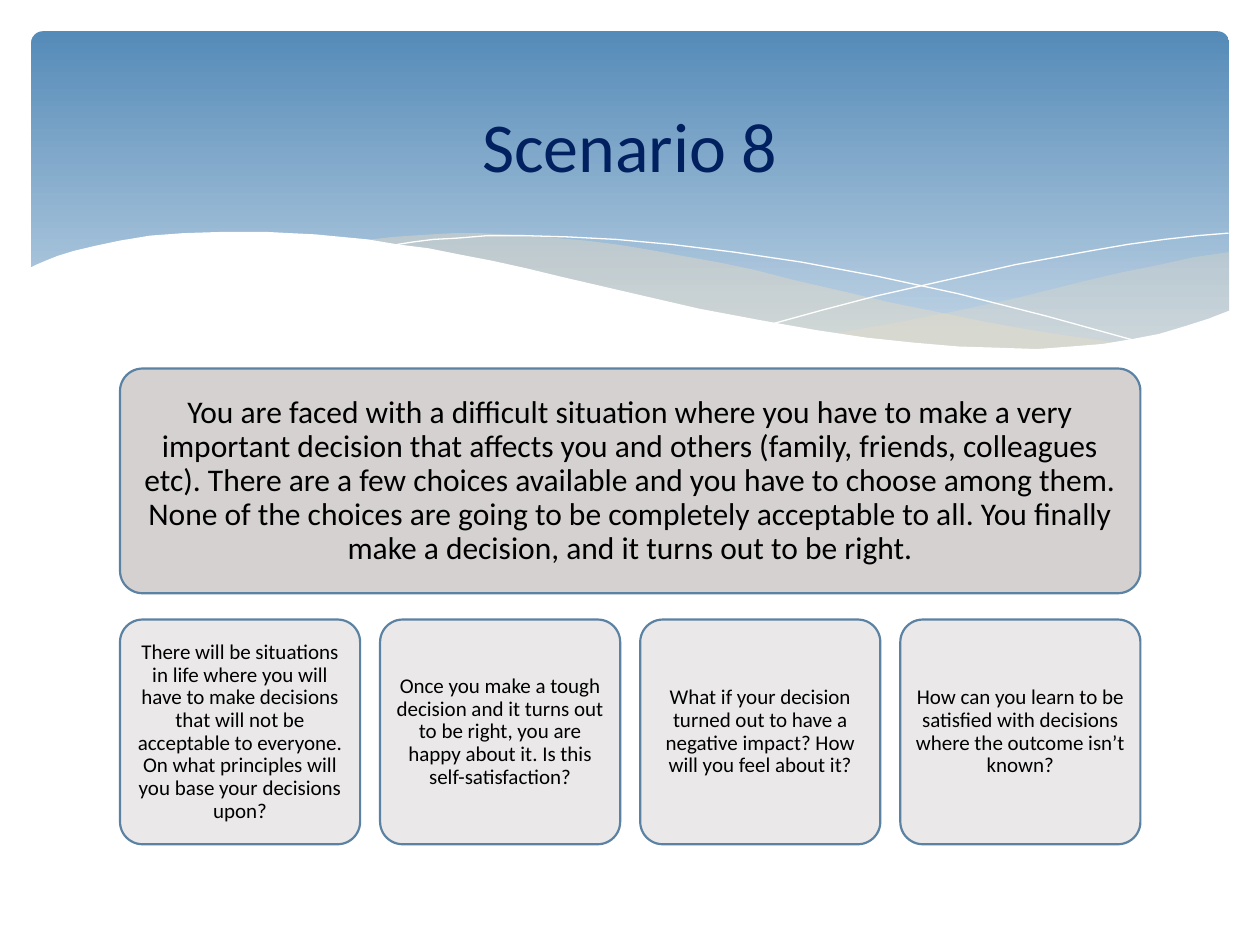
from dataclasses import dataclass

from lxml.etree import SubElement
from pptx import Presentation
from pptx.dml.color import RGBColor
from pptx.enum.shapes import MSO_SHAPE
from pptx.enum.text import MSO_ANCHOR, PP_ALIGN
from pptx.oxml.ns import qn
from pptx.slide import Slide
from pptx.util import Cm, Pt

COLORS = {
    "banner_top": "558BB8", "banner_bottom": "BFD3E4", "wave": "EBDDC3",
    "white": "FFFFFF", "situation": "D5D1D1", "question": "EAE8E8",
    "outline": "5B82A2", "title": "002060", "text": "000000",
}

# Outline points are in units of WAVE_UNIT.
WAVE_UNIT = Cm(0.0254)
RIGHT_WAVE = [
    (976, 200), (948, 204), (921, 210), (891, 216), (861, 223), (805, 237),
    (753, 248), (706, 257), (661, 265), (691, 269), (719, 272), (745, 275),
    (769, 277), (803, 278), (835, 277), (863, 275), (889, 272), (913, 267),
    (935, 262), (949, 257), (963, 252), (976, 247),
]
LEFT_WAVE = [
    (893, 273), (866, 269), (837, 265), (807, 260), (775, 254), (741, 247),
    (706, 240), (668, 231), (629, 222), (598, 214), (569, 208), (541, 203),
    (514, 198), (489, 194), (465, 191), (442, 189), (420, 187), (399, 186),
    (380, 185), (361, 185), (344, 186), (328, 187), (313, 188), (286, 191),
    (323, 196), (362, 203), (404, 211), (449, 222), (491, 232), (530, 240),
    (566, 248), (601, 255), (634, 261), (665, 266), (695, 270), (722, 274),
    (748, 276), (773, 277), (796, 278), (828, 278), (857, 277), (876, 275),
    (893, 273),
]
FALLING_LINE = [
    (309, 195), (328, 192), (344, 190), (363, 189), (387, 187), (416, 187),
    (450, 188), (489, 190), (533, 194), (582, 200), (636, 208), (695, 219),
    (760, 233), (831, 251), (907, 272),
]
RISING_LINE = [
    (613, 257), (653, 246), (695, 235), (748, 223), (806, 210), (866, 199),
    (895, 194), (924, 190), (951, 187), (975, 185),
]
LOWER_EDGE = [
    (977, 246), (959, 253), (940, 259), (920, 265), (899, 269), (875, 273),
    (850, 275), (823, 277), (793, 276), (761, 275), (726, 272), (688, 268),
    (648, 262), (603, 254), (555, 245), (503, 233), (447, 220), (418, 213),
    (391, 207), (365, 202), (340, 197), (316, 194), (292, 190), (271, 188),
    (250, 186), (230, 185), (211, 184), (177, 184), (146, 185), (119, 187),
    (95, 191), (76, 195), (59, 199), (46, 203), (36, 207), (29, 210),
    (23, 213), (23, 329), (977, 329),
]

SITUATION = (
    "You are faced with a difficult situation where you have to make a very "
    "important decision that affects you and others (family, friends, "
    "colleagues etc). There are a few choices available and you have to choose "
    "among them. None of the choices are going to be completely acceptable to "
    "all. You finally make a decision, and it turns out to be right."
)
QUESTIONS = [
    "There will be situations in life where you will have to make decisions "
    "that will not be acceptable to everyone. On what principles will you base "
    "your decisions upon?",
    "Once you make a tough decision and it turns out to be right, you are "
    "happy about it. Is this self-satisfaction?",
    "What if your decision turned out to have a negative impact? How will you "
    "feel about it?",
    "How can you learn to be satisfied with decisions where the outcome isn’t "
    "known?",
]


def rgb(name):
    return RGBColor.from_string(COLORS[name])


@dataclass
class ScenarioSlide:
    slide: Slide
    font: str = "Calibri"
    outline_width: float = 1.25

    def set_text(self, shape, text, size, color):
        frame = shape.text_frame
        frame.text = text
        frame.word_wrap = True
        frame.vertical_anchor = MSO_ANCHOR.MIDDLE
        paragraph = frame.paragraphs[0]
        paragraph.alignment = PP_ALIGN.CENTER
        font = paragraph.runs[0].font
        font.name, font.size = self.font, Pt(size)
        font.color.rgb = rgb(color)

    def rounded(self, left, top, width, height, corner):
        shape = self.slide.shapes.add_shape(
            MSO_SHAPE.ROUNDED_RECTANGLE, Cm(left), Cm(top), Cm(width), Cm(height))
        shape.adjustments[0] = corner
        shape.shadow.inherit = False
        return shape

    def banner(self):
        banner = self.rounded(0.63, 0.63, 24.15, 6.86, 0.034)
        banner.line.fill.background()
        banner.fill.gradient()
        banner.fill.gradient_angle = 270
        upper, lower = banner.fill.gradient_stops
        upper.position, lower.position = 0, 0.9
        upper.color.rgb, lower.color.rgb = rgb("banner_top"), rgb("banner_bottom")

    def outline(self, points, closed):
        builder = self.slide.shapes.build_freeform(*points[0], scale=WAVE_UNIT)
        builder.add_line_segments(points[1:], close=closed)
        shape = builder.convert_to_shape()
        shape.shadow.inherit = False
        return shape

    def wave(self, points, color, opacity=100):
        wave = self.outline(points, closed=True)
        wave.line.fill.background()
        wave.fill.solid()
        wave.fill.fore_color.rgb = rgb(color)
        if opacity < 100:
            tint = wave.element.spPr.find(f".//{qn('a:srgbClr')}")
            SubElement(tint, qn("a:alpha"), val=str(opacity * 1000))

    def hairline(self, points):
        hairline = self.outline(points, closed=False)
        hairline.fill.background()
        hairline.line.color.rgb = rgb("white")
        hairline.line.width = Pt(0)

    def card(self, text, left, top, width, height, color, size, inset):
        card = self.rounded(left, top, width, height, 0.1)
        card.fill.solid()
        card.fill.fore_color.rgb = rgb(color)
        card.line.color.rgb = rgb("outline")
        card.line.width = Pt(self.outline_width)
        self.set_text(card, text, size, "text")
        frame = card.text_frame
        frame.margin_left = frame.margin_right = Cm(inset)
        frame.margin_top = frame.margin_bottom = Cm(inset)
        frame.paragraphs[0].line_spacing = 0.9

    def title(self, text):
        """Fill the title placeholder and bring it in front of the banner."""
        title = self.slide.shapes.title
        title.left, title.top = Cm(0.21), Cm(1.8)
        title.width, title.height = Cm(24.97), Cm(2.21)
        self.set_text(title, text, 40, "title")
        title.element.getparent().append(title.element)


def main():
    presentation = Presentation()
    presentation.slide_width, presentation.slide_height = Cm(25.4), Cm(19.05)
    title_only = presentation.slide_layouts[5]
    scenario = ScenarioSlide(presentation.slides.add_slide(title_only))

    scenario.banner()
    scenario.wave(RIGHT_WAVE, "wave", opacity=29)
    scenario.wave(LEFT_WAVE, "wave", opacity=40)
    scenario.hairline(FALLING_LINE)
    scenario.hairline(RISING_LINE)
    scenario.wave(LOWER_EDGE, "white")

    left, width, height = 2.42, 20.57, 4.53
    scenario.card(SITUATION, left, 7.43, width, height, "situation", 18, 0.19)
    question_width = 4.84
    step = (width - question_width) / (len(QUESTIONS) - 1)
    for column, question in enumerate(QUESTIONS):
        scenario.card(question, left + column * step, 12.49, question_width,
                      height, "question", 12, 0.13)

    scenario.title("Scenario 8")
    presentation.save("out.pptx")


if __name__ == "__main__":
    main()
